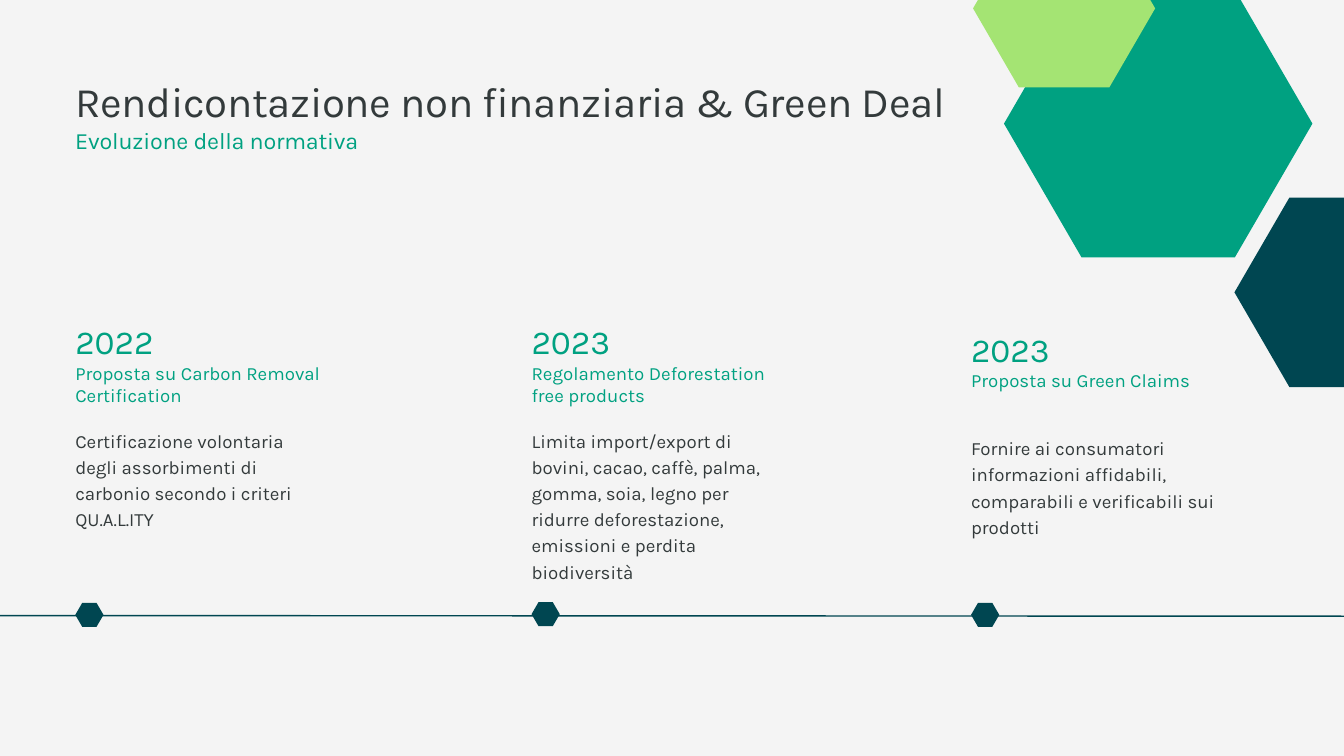
from dataclasses import dataclass

from lxml.etree import SubElement
from pptx import Presentation
from pptx.dml.color import RGBColor
from pptx.enum.shapes import MSO_CONNECTOR, MSO_SHAPE
from pptx.oxml.ns import qn
from pptx.slide import Slide
from pptx.text.text import TextFrame
from pptx.util import Pt

PX = 9144
FONT = "Karla"
PAPER, INK = "F4F4F4", "333A3B"
GREEN, DARK, LIME = "00A181", "004651", "A4E473"


@dataclass
class Hexagon:
    left: int
    top: int
    width: int
    height: int
    color: str = DARK


@dataclass
class Event:
    left: int
    top: int
    mark: int
    year: str
    title: str
    body: str
    height: int = 191


EVENTS = [
    Event(112, 478, 897, "2022", "Proposta su Carbon Removal Certification",
          "Certificazione volontaria degli assorbimenti di carbonio "
          "secondo i criteri QU.A.L.ITY"),
    Event(791, 478, 896, "2023", "Regolamento Deforestation free products",
          "Limita import/export di bovini, cacao, caffè, palma, gomma, soia, "
          "legno per ridurre deforestazione, emissioni e perdita biodiversità",
          height=230),
    Event(1445, 489, 897, "2023", "Proposta su Green Claims",
          "Fornire ai consumatori informazioni affidabili, comparabili e "
          "verificabili sui prodotti"),
]
DECOR = [
    Hexagon(1837, 294, 326, 282),
    Hexagon(1494, -15, 459, 398, GREEN),
    Hexagon(1448, -105, 271, 235, LIME),
]


def px(*values: int) -> list[int]:
    return [value * PX for value in values]


def rgb(color: str) -> RGBColor:
    return RGBColor.from_string(color)


def add_box(slide: Slide, left: int, top: int, width: int, height: int) -> TextFrame:
    frame = slide.shapes.add_textbox(*px(left, top, width, height)).text_frame
    frame.word_wrap = True
    frame.margin_left = frame.margin_right = 0
    frame.margin_top = frame.margin_bottom = 0
    return frame


def write(frame: TextFrame, text: str, *, size: int, color: str,
          lead: float, track: int = 0) -> None:
    first = frame.paragraphs[0]
    para = frame.add_paragraph() if first.runs else first
    para.line_spacing = Pt(lead)
    run = para.add_run()
    run.text = text
    run.font.name = FONT
    run.font.size = Pt(size)
    run.font.color.rgb = rgb(color)
    if track:
        run.font._element.set("spc", str(track))


def draw_hexagon(slide: Slide, item: Hexagon) -> None:
    shape = slide.shapes.add_shape(
        MSO_SHAPE.HEXAGON, *px(item.left, item.top, item.width, item.height))
    shape.adjustments[0] = 0.29
    shape.shadow.inherit = False
    shape.fill.solid()
    shape.fill.fore_color.rgb = rgb(item.color)
    shape.line.fill.background()


def draw_axis(slide: Slide) -> None:
    line = slide.shapes.add_connector(MSO_CONNECTOR.STRAIGHT, *px(-27, 916, 2000, 917))
    line.line.color.rgb = rgb(DARK)
    line.line.width = Pt(1.5)
    SubElement(line._element.spPr, qn("a:effectLst"))


def draw_event(slide: Slide, event: Event) -> None:
    head = add_box(slide, event.left, event.top, 368, 127)
    write(head, event.year, size=36, color=GREEN, lead=43.2)
    write(head, event.title, size=20, color=GREEN, lead=24)
    body = add_box(slide, event.left, event.top + 156, 368, event.height)
    write(body, event.body, size=20, color=INK, lead=28)
    draw_hexagon(slide, Hexagon(event.left, event.mark, 42, 36))


def main() -> None:
    deck = Presentation()
    deck.slide_width, deck.slide_height = px(2000, 1125)
    slide = deck.slides.add_slide(deck.slide_layouts[6])
    slide.background.fill.solid()
    slide.background.fill.fore_color.rgb = rgb(PAPER)

    draw_axis(slide)
    for item in DECOR:
        draw_hexagon(slide, item)
    title = add_box(slide, 112, 112, 1306, 115)
    write(title, "Rendicontazione non finanziaria & Green Deal",
          size=45, color=INK, lead=54, track=-40)
    write(title, "Evoluzione della normativa",
          size=25, color=GREEN, lead=30, track=-20)
    for event in EVENTS:
        draw_event(slide, event)

    deck.save("out.pptx")


if __name__ == "__main__":
    main()
